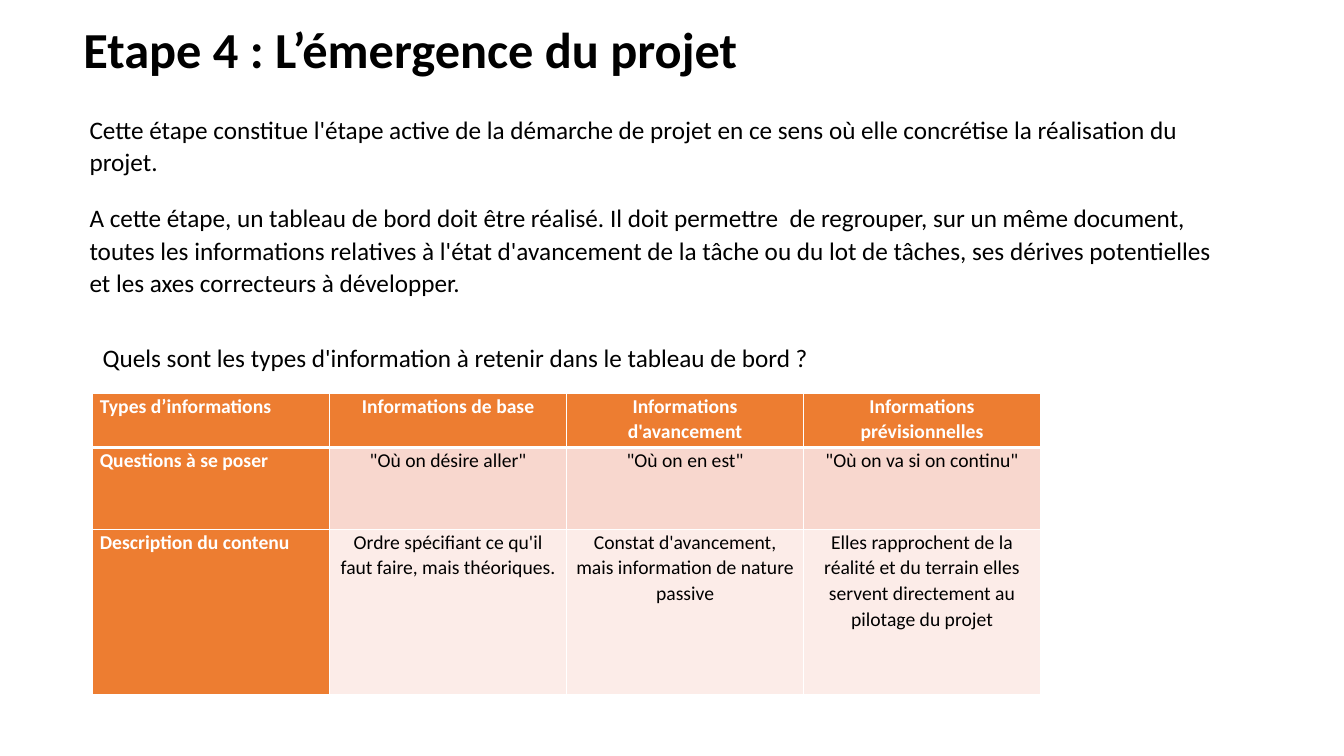
import pptx
import pptx.util
import pptx.dml.color
import pptx.enum.text
import pptx.oxml
import pptx.oxml.ns

Inches, Pt = pptx.util.Inches, pptx.util.Pt
Align = pptx.enum.text.PP_ALIGN

THEME = {
    "font": "Calibri",
    "title": 36, "body": 18, "cell": 14,
    "ink": "000000", "white": "FFFFFF",
    "head": "ED7D31", "bands": ["F8D7CE", "FCECE8"],
    "lead": 1.07,
}

TITLE = ("Etape 4 : L’émergence du projet", (0.73, 0.13, 8.94, 0.71))
NOTES = [
    ("Cette étape constitue l'étape active de la démarche de projet en ce sens "
     "où elle concrétise la réalisation du projet.", (0.79, 1.06, 11.4, 0.75)),
    ("A cette étape, un tableau de bord doit être réalisé. Il doit permettre  de "
     "regrouper, sur un même document, toutes les informations relatives à l'état "
     "d'avancement de la tâche ou du lot de tâches, ses dérives potentielles et "
     "les axes correcteurs à développer.", (0.79, 1.94, 11.4, 1.07)),
    ("Quels sont les types d'information à retenir dans le tableau de bord ?",
     (0.92, 3.33, 8.56, 0.43)),
]
BOARD = [
    ["Types d’informations", "Informations de base",
     "Informations d'avancement", "Informations prévisionnelles"],
    ["Questions à se poser", '"Où on désire aller"', '"Où on en est"',
     '"Où on va si on continu"'],
    ["Description du contenu",
     "Ordre spécifiant ce qu'il faut faire, mais théoriques.",
     "Constat d'avancement, mais information de nature passive",
     "Elles rapprochent de la réalité et du terrain elles servent directement "
     "au pilotage du projet"],
]
PLACE = (0.92, 3.9, 9.4, 2.99)
ROWS = [0.54, 0.81, 1.64]


def color(code):
    return pptx.dml.color.RGBColor.from_string(code)


def write(frame, text, size, ink, bold=False, para=None):
    """Put one styled paragraph into a text frame."""
    frame.word_wrap = True
    line = frame.paragraphs[0]
    for name, value in (para or {}).items():
        setattr(line, name, value)
    run = line.add_run()
    run.text = text
    look = {"name": THEME["font"], "size": Pt(size), "bold": bold}
    for name, value in look.items():
        setattr(run.font, name, value)
    run.font.color.rgb = color(ink)


def add_text(slide, text, place, size, **look):
    box = slide.shapes.add_textbox(*map(Inches, place))
    write(box.text_frame, text, size, THEME["ink"], **look)


def edge(cell, sides):
    """Draw cell borders, given as side: width in points."""
    props = cell._tc.get_or_add_tcPr()
    space = pptx.oxml.ns.nsdecls("a")
    for spot, (side, width) in enumerate(sides.items()):
        props.insert(spot, pptx.oxml.parse_xml(
            f'<a:ln{side} {space} w="{Pt(width)}"><a:solidFill>'
            f'<a:srgbClr val="{THEME["white"]}"/></a:solidFill></a:ln{side}>'))


def add_board(slide):
    count = len(BOARD[0])
    table = slide.shapes.add_table(
        len(BOARD), count, *map(Inches, PLACE)).table
    for col in table.columns:
        col.width = Inches(PLACE[2] / count)
    pads = {"margin_left": Inches(0.07), "margin_right": Inches(0.07),
            "margin_top": 0, "margin_bottom": 0}
    for r, texts in enumerate(BOARD):
        table.rows[r].height = Inches(ROWS[r])
        for c, text in enumerate(texts):
            cell = table.cell(r, c)
            head = r == 0 or c == 0
            for name, value in pads.items():
                setattr(cell, name, value)
            cell.fill.solid()
            cell.fill.fore_color.rgb = color(
                THEME["head"] if head else THEME["bands"][r - 1])
            edge(cell, {"L": 1, "R": 1, "T": 3 if r == 1 else 1,
                        "B": 3 if r == 0 else 1})
            write(cell.text_frame, text, THEME["cell"],
                  THEME["white" if head else "ink"], head,
                  {"alignment": Align.CENTER if c else Align.LEFT,
                   "line_spacing": THEME["lead"]})


def main():
    deck = pptx.Presentation()
    deck.slide_width, deck.slide_height = Inches(13.33), Inches(7.5)
    slide = deck.slides.add_slide(deck.slide_layouts[6])
    add_text(slide, *TITLE, THEME["title"], bold=True)
    para = {"line_spacing": THEME["lead"], "space_after": Pt(8)}
    for text, place in NOTES:
        add_text(slide, text, place, THEME["body"], para=para)
    add_board(slide)
    deck.save("out.pptx")


if __name__ == "__main__":
    main()
